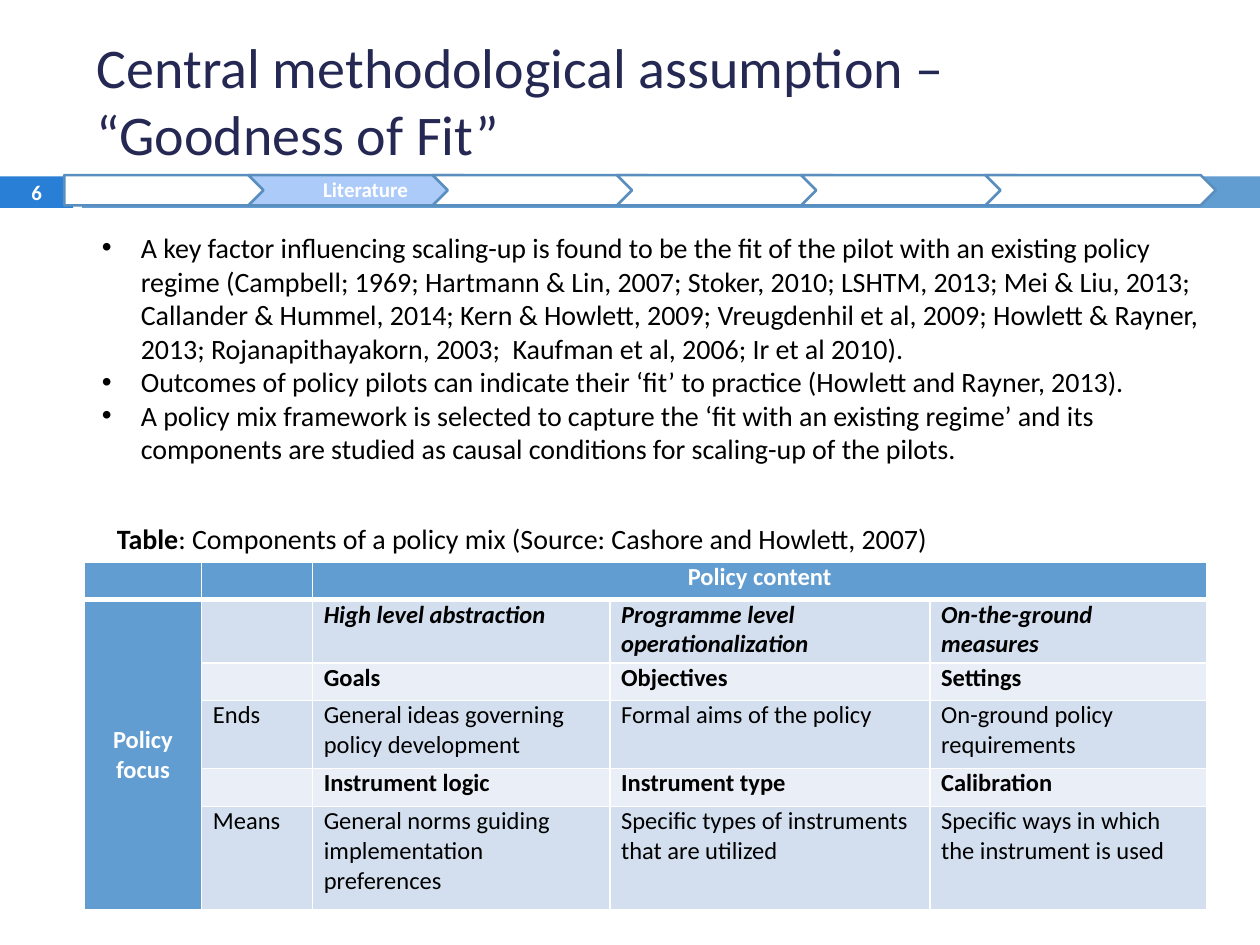
from lxml import etree
from pptx import Presentation
from pptx.dml.color import RGBColor
from pptx.enum.shapes import MSO_SHAPE
from pptx.enum.text import MSO_ANCHOR, PP_ALIGN
from pptx.oxml.ns import qn
from pptx.util import Inches, Pt

RECT, CHEVRON, PENTAGON = MSO_SHAPE.RECTANGLE, MSO_SHAPE.CHEVRON, MSO_SHAPE.PENTAGON
LEFT, CENTER = PP_ALIGN.LEFT, PP_ALIGN.CENTER
TOP, MIDDLE = MSO_ANCHOR.TOP, MSO_ANCHOR.MIDDLE

FONT = "Calibri"
WHITE, BLACK, NAVY = "FFFFFF", "000000", "242852"
BLUE, ACCENT, OUTLINE, ACTIVE = "629DD1", "297FD5", "598EBE", "ACCBF9"
BAND_DARK, BAND_LIGHT = "D3DFEE", "EAEFF7"

STEP_COUNT, ACTIVE_STEP = 6, 1
STEP_LEFT, STEP_PITCH = 0.51, 1.462

BULLETS = [
    "A key factor influencing scaling-up is found to be the fit of the pilot with an "
    "existing policy regime (Campbell; 1969; Hartmann & Lin, 2007; Stoker, 2010; LSHTM, "
    "2013; Mei & Liu, 2013; Callander & Hummel, 2014; Kern & Howlett, 2009; Vreugdenhil "
    "et al, 2009; Howlett & Rayner, 2013; Rojanapithayakorn, 2003;  Kaufman et al, 2006; "
    "Ir et al 2010).",
    "Outcomes of policy pilots can indicate their ‘fit’ to practice (Howlett and Rayner, "
    "2013).",
    "A policy mix framework is selected to capture the ‘fit with an existing regime’ and "
    "its components are studied as causal conditions for scaling-up of the pilots.",
]

COLUMN_WIDTHS = [0.93, 0.88, 2.36, 2.54, 2.2]
ROW_HEIGHTS = [0.25, 0.5, 0.25, 0.54, 0.25, 0.82]
ROWS = [
    ["", "", "Policy content", "", ""],
    ["Policy focus", "", "High level abstraction", "Programme level operationalization",
     "On-the-ground measures"],
    ["", "", "Goals", "Objectives", "Settings"],
    ["", "Ends", "General ideas governing policy development",
     "Formal aims of the policy", "On-ground policy requirements"],
    ["", "", "Instrument logic", "Instrument type", "Calibration"],
    ["", "Means", "General norms guiding implementation preferences",
     "Specific types of instruments that are utilized",
     "Specific ways in which the instrument is used"],
]
BOLD_ROWS, ITALIC_ROW = (1, 2, 4), 1


def rgb(value):
    return RGBColor.from_string(value)


def add_text(p, text, size=16, color=BLACK, bold=False, italic=False, align=LEFT):
    p.alignment = align
    r = p.add_run()
    r.text = text
    r.font.name, r.font.size = FONT, Pt(size)
    r.font.bold, r.font.italic = bold, italic
    r.font.color.rgb = rgb(color)


def add_box(s, left, top, width, height, anchor=TOP):
    sp = s.shapes.add_textbox(Inches(left), Inches(top), Inches(width), Inches(height))
    tf = sp.text_frame
    tf.word_wrap = True
    tf.vertical_anchor = anchor
    return tf


def add_block(s, kind, left, top, width, height, fill, line=None):
    sp = s.shapes.add_shape(kind, Inches(left), Inches(top), Inches(width), Inches(height))
    sp.shadow.inherit = False
    sp.fill.solid()
    sp.fill.fore_color.rgb = rgb(fill)
    if line:
        sp.line.color.rgb = rgb(line)
        sp.line.width = Pt(1.5)
    else:
        sp.line.fill.background()
    return sp


def add_bullets(tf, items, indent=0.31):
    for i, item in enumerate(items):
        p = tf.add_paragraph() if i else tf.paragraphs[0]
        add_text(p, item)
        pPr = p._p.get_or_add_pPr()
        pPr.set("marL", str(Inches(indent)))
        pPr.set("indent", str(-Inches(indent)))
        etree.SubElement(pPr, qn("a:buFont")).set("typeface", "Arial")
        etree.SubElement(pPr, qn("a:buChar")).set("char", "•")


def add_progress(s):
    for i in range(STEP_COUNT):
        active = i == ACTIVE_STEP
        sp = add_block(s, CHEVRON if i else PENTAGON, STEP_LEFT + i * STEP_PITCH, 1.39,
                       1.83, 0.24, ACTIVE if active else WHITE, OUTLINE)
        if active:
            tf = sp.text_frame
            tf.margin_left, tf.margin_right = Inches(0.05), Inches(0.02)
            tf.margin_top = tf.margin_bottom = Inches(0.04)
            tf.vertical_anchor = MIDDLE
            tf.paragraphs[0].line_spacing = 0.9
            add_text(tf.paragraphs[0], "Literature", size=12, color=WHITE, bold=True,
                     align=CENTER)


def set_borders(cell, header):
    tcPr = cell._tc.get_or_add_tcPr()
    for i, side in enumerate(("lnL", "lnR", "lnT", "lnB")):
        width = 3 if header and side == "lnB" else 1
        ln = etree.Element(qn("a:" + side), w=str(Pt(width)))
        fill = etree.SubElement(ln, qn("a:solidFill"))
        etree.SubElement(fill, qn("a:srgbClr")).set("val", WHITE)
        tcPr.insert(i, ln)


def format_cell(cell, text, row, col):
    heading = row == 0 or col == 0
    cell.margin_left = cell.margin_right = Inches(0.09)
    cell.margin_top = cell.margin_bottom = 0
    cell.vertical_anchor = MIDDLE if col == 0 else TOP
    cell.fill.solid()
    band = BAND_DARK if row % 2 else BAND_LIGHT
    cell.fill.fore_color.rgb = rgb(BLUE if heading else band)
    set_borders(cell, row == 0)
    add_text(cell.text_frame.paragraphs[0], text, size=14,
             color=WHITE if heading else BLACK, bold=heading or row in BOLD_ROWS,
             italic=row == ITALIC_ROW and not heading, align=CENTER if heading else LEFT)


def add_policy_table(s):
    frame = s.shapes.add_table(len(ROWS), len(COLUMN_WIDTHS), Inches(0.67), Inches(4.46),
                               Inches(sum(COLUMN_WIDTHS)), Inches(sum(ROW_HEIGHTS)))
    table = frame.table
    table.horz_banding = False
    for column, width in zip(table.columns, COLUMN_WIDTHS):
        column.width = Inches(width)
    for row, height in zip(table.rows, ROW_HEIGHTS):
        row.height = Inches(height)
    table.cell(0, 2).merge(table.cell(0, 4))
    table.cell(1, 0).merge(table.cell(5, 0))
    for i, texts in enumerate(ROWS):
        for j, text in enumerate(texts):
            format_cell(table.cell(i, j), text, i, j)


def main():
    prs = Presentation()
    prs.slide_width, prs.slide_height = Inches(10), Inches(7.5)
    s = prs.slides.add_slide(prs.slide_layouts[6])

    # Band with slide number
    add_block(s, RECT, 0, 1.4, 0.58, 0.25, ACCENT)
    add_block(s, RECT, 0.65, 1.4, 9.35, 0.25, BLUE)
    number = add_box(s, 0, 1.39, 0.58, 0.27, MIDDLE)
    add_text(number.paragraphs[0], "6", size=11.9, color=WHITE, bold=True, align=CENTER)

    # Title
    title = add_box(s, 0.67, 0.25, 8.92, 1.08, MIDDLE)
    add_text(title.paragraphs[0], "Central methodological assumption – “Goodness of Fit”",
             size=32, color=NAVY)

    # Table and caption
    add_policy_table(s)
    caption = add_box(s, 0.83, 4.09, 7.46, 0.37).paragraphs[0]
    add_text(caption, "Table", bold=True)
    add_text(caption, ": Components of a policy mix (Source: Cashore and Howlett, 2007)")

    # Body text
    add_bullets(add_box(s, 0.71, 1.78, 8.93, 1.99), BULLETS)

    # Progress steps
    add_progress(s)

    prs.save("out.pptx")


if __name__ == "__main__":
    main()
